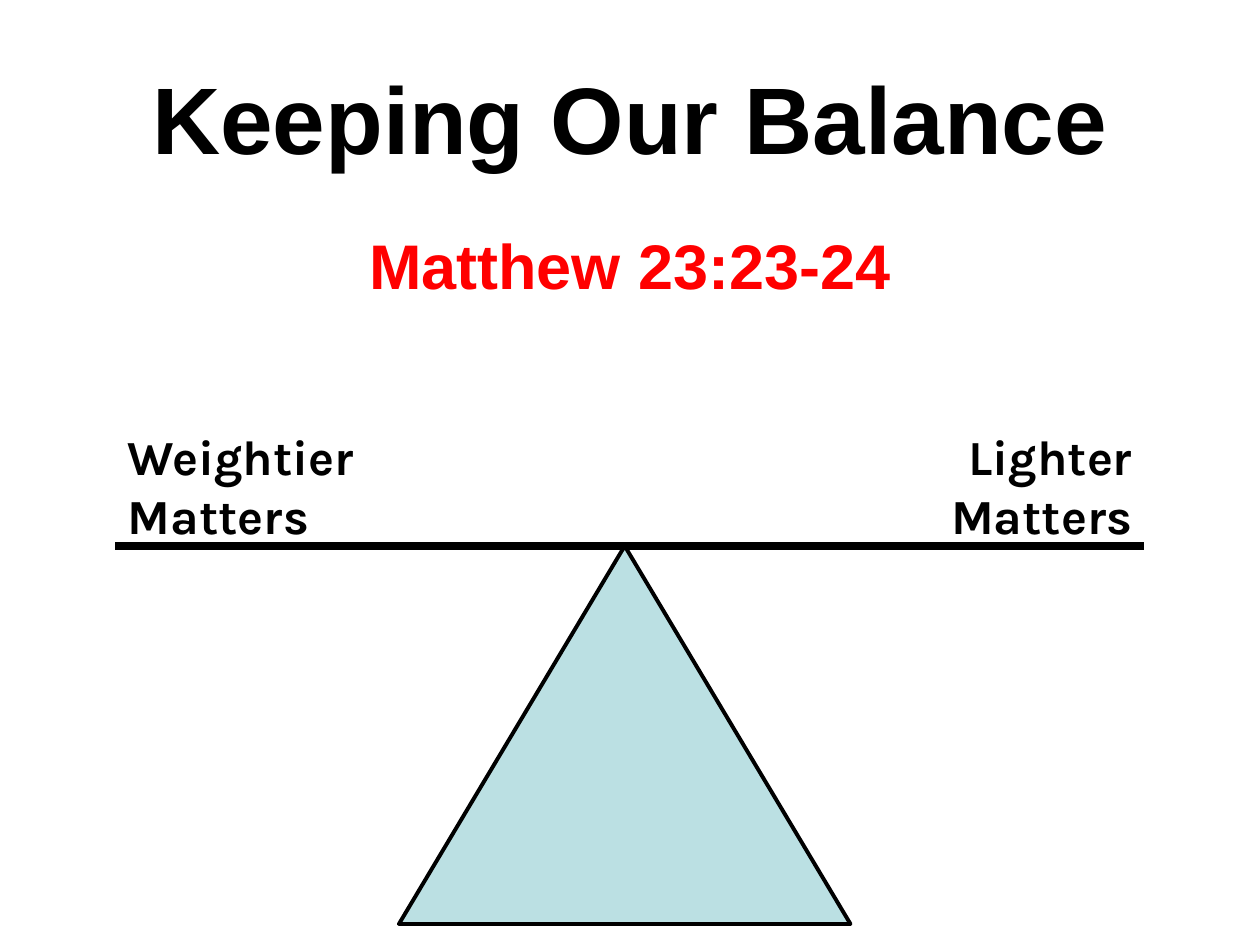
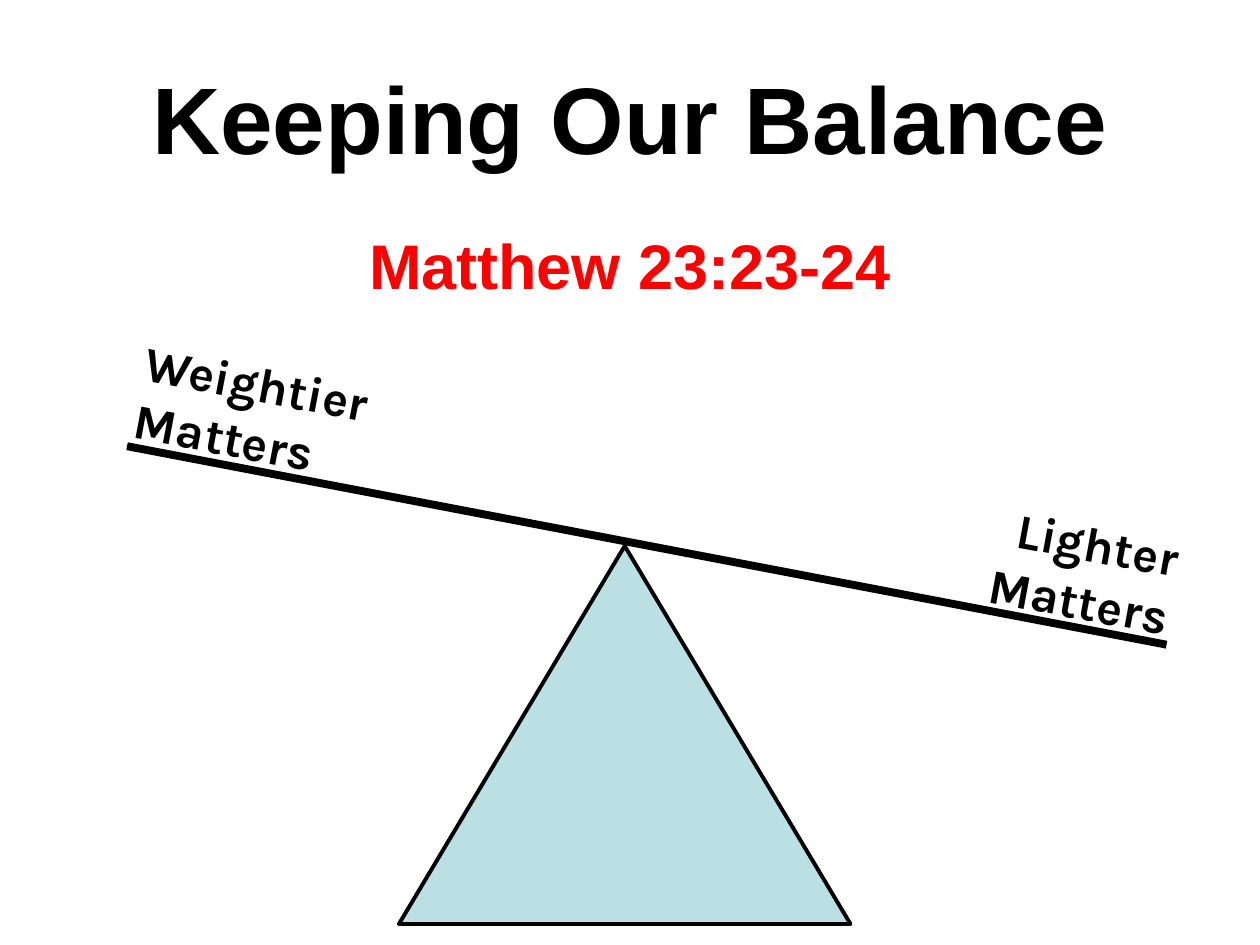
"""Build two slides that show a balance, first level and then tilted."""
from dataclasses import dataclass

from lxml import etree
from pptx import Presentation
from pptx.dml.color import RGBColor
from pptx.enum.shapes import MSO_CONNECTOR, MSO_SHAPE
from pptx.enum.text import MSO_ANCHOR, MSO_AUTO_SIZE, PP_ALIGN
from pptx.oxml.ns import qn
from pptx.presentation import Presentation as Deck
from pptx.slide import Slide
from pptx.text.text import TextFrame
from pptx.util import Emu, Inches, Pt

LEFT, CENTER, RIGHT = PP_ALIGN.LEFT, PP_ALIGN.CENTER, PP_ALIGN.RIGHT
TOP, MIDDLE = MSO_ANCHOR.TOP, MSO_ANCHOR.MIDDLE
FIT_SHAPE, NO_FIT = MSO_AUTO_SIZE.SHAPE_TO_FIT_TEXT, MSO_AUTO_SIZE.NONE
TRIANGLE, STRAIGHT = MSO_SHAPE.ISOSCELES_TRIANGLE, MSO_CONNECTOR.STRAIGHT

SLIDE_WIDTH, SLIDE_HEIGHT = Inches(10), Inches(7.5)
COLUMNS, ROWS = 120, 90
TITLE_AND_CONTENT = 1


@dataclass(frozen=True)
class TextStyle:
    font: str
    size: float
    color: RGBColor


@dataclass(frozen=True)
class Theme:
    black: RGBColor = RGBColor(0x00, 0x00, 0x00)
    white: RGBColor = RGBColor(0xFF, 0xFF, 0xFF)
    pale_blue: RGBColor = RGBColor(0xBB, 0xE0, 0xE3)
    title: TextStyle = TextStyle("Arial", 54, RGBColor(0x00, 0x00, 0x00))
    verse: TextStyle = TextStyle("Arial", 36, RGBColor(0xFF, 0x00, 0x00))
    label: TextStyle = TextStyle("Karla", 28, RGBColor(0x00, 0x00, 0x00))
    outline: float = 2.25
    beam: float = 4.5


@dataclass(frozen=True)
class Area:
    column: float
    row: float
    columns: float
    rows: float

    def place(self) -> tuple[Emu, Emu, Emu, Emu]:
        return across(self.column), down(self.row), across(self.columns), down(self.rows)


@dataclass(frozen=True)
class Label:
    text: str
    area: Area
    align: PP_ALIGN
    rotation: float = 0


@dataclass(frozen=True)
class Beam:
    start: tuple[float, float]
    end: tuple[float, float]


@dataclass(frozen=True)
class Balance:
    beam: Beam
    labels: tuple[Label, Label]


THEME = Theme()
TITLE_AREA = Area(6, 3.6, 108, 15)
VERSE_AREA = Area(0, 21, 120, 8.5)
FULCRUM_AREA = Area(38, 52, 43, 36)
WEIGHTIER, LIGHTER = "Weightier Matters", "Lighter Matters"
BALANCES = (
    Balance(
        Beam((11, 52), (109, 52)),
        (
            Label(WEIGHTIER, Area(11, 40, 28, 12.5), LEFT),
            Label(LIGHTER, Area(82, 40, 27, 12.5), RIGHT),
        ),
    ),
    Balance(
        Beam((12.1, 42.5), (111.1, 61.4)),
        (
            Label(WEIGHTIER, Area(12, 33.5, 30, 12.5), LEFT, 10.7),
            Label(LIGHTER, Area(85.4, 47.4, 27.7, 12.8), RIGHT, 10.5),
        ),
    ),
)


def across(columns: float) -> Emu:
    return Emu(round(SLIDE_WIDTH * columns / COLUMNS))


def down(rows: float) -> Emu:
    return Emu(round(SLIDE_HEIGHT * rows / ROWS))


def write(frame: TextFrame, text: str, style: TextStyle, align: PP_ALIGN,
          anchor: MSO_ANCHOR = TOP, fit: MSO_AUTO_SIZE = FIT_SHAPE) -> None:
    frame.text = text
    frame.word_wrap = True
    frame.auto_size = fit
    frame.vertical_anchor = anchor
    para = frame.paragraphs[0]
    para.alignment = align
    font = para.runs[0].font
    font.name, font.size, font.bold = style.font, Pt(style.size), True
    font.color.rgb = style.color


def add_headings(page: Slide) -> None:
    title, verse = page.shapes.title, page.placeholders[1]
    for box, area in ((title, TITLE_AREA), (verse, VERSE_AREA)):
        box.left, box.top, box.width, box.height = area.place()
    write(title.text_frame, "Keeping Our Balance", THEME.title, CENTER, MIDDLE, NO_FIT)
    write(verse.text_frame, "Matthew 23:23-24", THEME.verse, CENTER)
    properties = verse.text_frame.paragraphs[0]._p.get_or_add_pPr()
    properties.set("marL", "0")
    properties.set("indent", "0")
    etree.SubElement(properties, qn("a:buNone"))


def add_fulcrum(page: Slide) -> None:
    fulcrum = page.shapes.add_shape(TRIANGLE, *FULCRUM_AREA.place())
    fulcrum.shadow.inherit = False
    fulcrum.fill.solid()
    fulcrum.fill.fore_color.rgb = THEME.pale_blue
    fulcrum.line.color.rgb = THEME.black
    fulcrum.line.width = Pt(THEME.outline)


def add_beam(page: Slide, beam: Beam) -> None:
    (start_column, start_row), (end_column, end_row) = beam.start, beam.end
    line = page.shapes.add_connector(
        STRAIGHT, across(start_column), down(start_row), across(end_column), down(end_row))
    line.line.color.rgb = THEME.black
    line.line.width = Pt(THEME.beam)
    etree.SubElement(line._element.spPr, qn("a:effectLst"))


def add_label(page: Slide, label: Label) -> None:
    box = page.shapes.add_textbox(*label.area.place())
    box.rotation = label.rotation
    write(box.text_frame, label.text, THEME.label, label.align)


def add_balance_slide(deck: Deck, balance: Balance) -> None:
    page = deck.slides.add_slide(deck.slide_layouts[TITLE_AND_CONTENT])
    page.background.fill.solid()
    page.background.fill.fore_color.rgb = THEME.white
    add_headings(page)
    add_fulcrum(page)
    add_beam(page, balance.beam)
    for label in balance.labels:
        add_label(page, label)


def main() -> None:
    deck = Presentation()
    deck.slide_width, deck.slide_height = SLIDE_WIDTH, SLIDE_HEIGHT
    for balance in BALANCES:
        add_balance_slide(deck, balance)
    deck.save("out.pptx")


if __name__ == "__main__":
    main()
